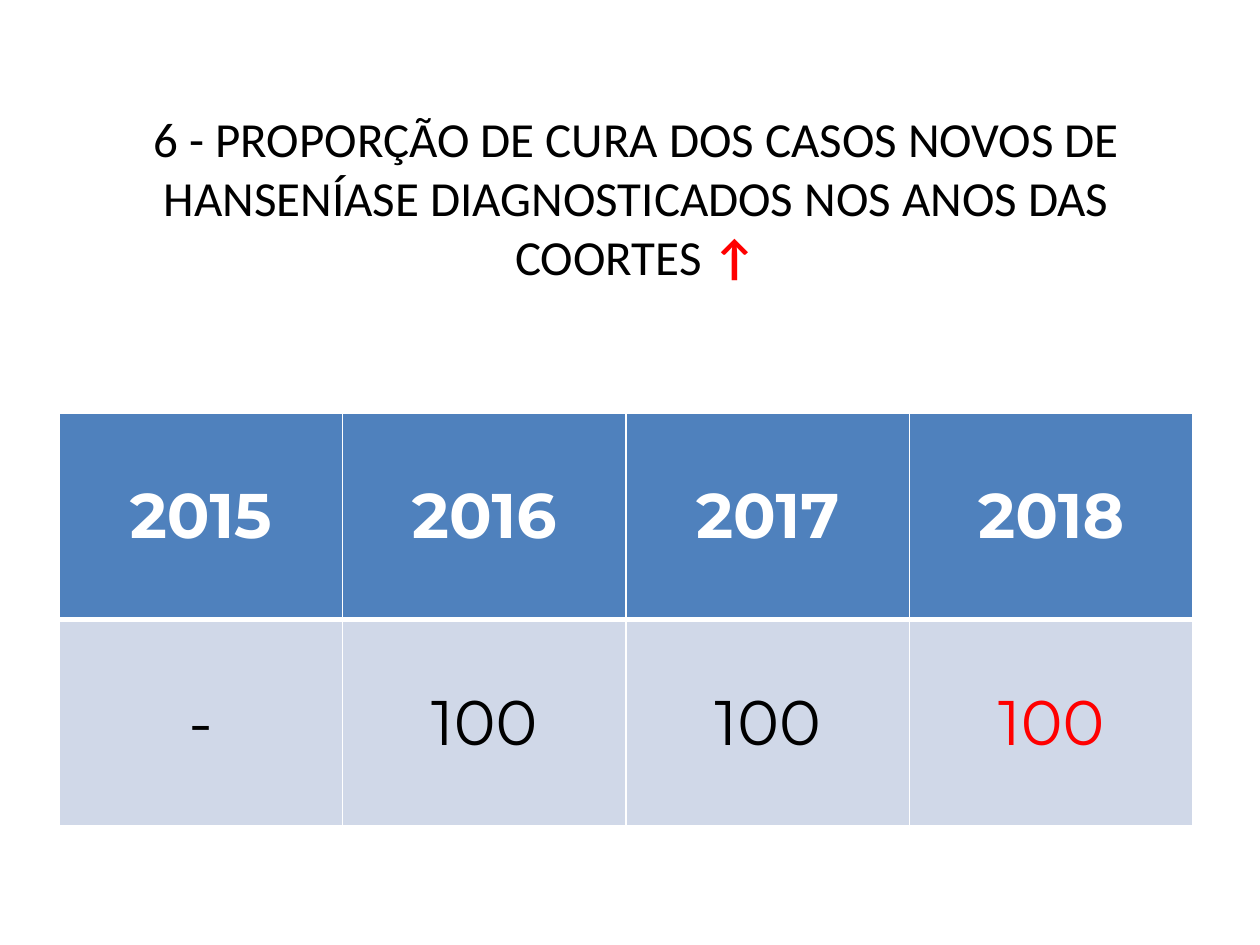
from lxml import etree
from pptx import Presentation
from pptx.dml.color import RGBColor
from pptx.enum.text import MSO_ANCHOR, PP_ALIGN
from pptx.oxml.ns import qn
from pptx.util import Pt

PX = 914400 / 126
CENTER = PP_ALIGN.CENTER
MIDDLE = MSO_ANCHOR.MIDDLE
COLORS = {
    "white": "FFFFFF",
    "black": "000000",
    "red": "FF0000",
    "header": "4F81BD",
    "body": "D0D8E8",
}
YEARS = ["2015", "2016", "2017", "2018"]
CURE_RATES = ["-", "100", "100", "100"]


def px(n):
    return round(n * PX)


def rgb(name):
    return RGBColor.from_string(COLORS[name])


def add_run(p, text, font, size, color, bold=False):
    r = p.add_run()
    r.text = text
    r.font.name = font
    r.font.size = Pt(size)
    r.font.bold = bold
    r.font.color.rgb = rgb(color)


def add_title(s, x, y, w, h):
    sp = s.shapes.add_textbox(px(x), px(y), px(w), px(h))
    tf = sp.text_frame
    tf.word_wrap = True
    tf.vertical_anchor = MIDDLE
    p = tf.paragraphs[0]
    p.alignment = CENTER
    add_run(p, "6 - PROPORÇÃO DE CURA DOS CASOS NOVOS DE HANSENÍASE "
               "DIAGNOSTICADOS NOS ANOS DAS COORTES ", "Calibri", 28, "black")
    add_run(p, "↑", "Calibri", 28, "red", True)


def set_borders(cell, widths):
    tc_pr = cell._tc.get_or_add_tcPr()
    for side, width in widths.items():
        ln = etree.SubElement(tc_pr, qn(f"a:ln{side}"), w=str(Pt(width)))
        fill = etree.SubElement(ln, qn("a:solidFill"))
        etree.SubElement(fill, qn("a:srgbClr"), val=COLORS["white"])


def fill_cell(cell, text, fill, color, bold, borders):
    set_borders(cell, borders)
    cell.fill.solid()
    cell.fill.fore_color.rgb = rgb(fill)
    cell.vertical_anchor = MIDDLE
    p = cell.text_frame.paragraphs[0]
    p.alignment = CENTER
    add_run(p, text, "Montserrat", 36, color, bold)


def add_rates_table(s, x, y, w, h):
    table = s.shapes.add_table(2, len(YEARS), px(x), px(y), px(w), px(h)).table
    last = len(YEARS) - 1
    for col, (year, rate) in enumerate(zip(YEARS, CURE_RATES)):
        fill_cell(table.cell(0, col), year, "header", "white", True,
                  {"L": 1, "R": 1, "T": 1, "B": 3})
        fill_cell(table.cell(1, col), rate, "body",
                  "red" if col == last else "black", False,
                  {"L": 1, "R": 1, "T": 3, "B": 1})


def main():
    prs = Presentation()
    prs.slide_width, prs.slide_height = px(1260), px(945)
    s = prs.slides.add_slide(prs.slide_layouts[6])
    add_title(s, 69, 20, 1134, 354)
    add_rates_table(s, 59, 413, 1134, 413)
    prs.save("out.pptx")


if __name__ == "__main__":
    main()
